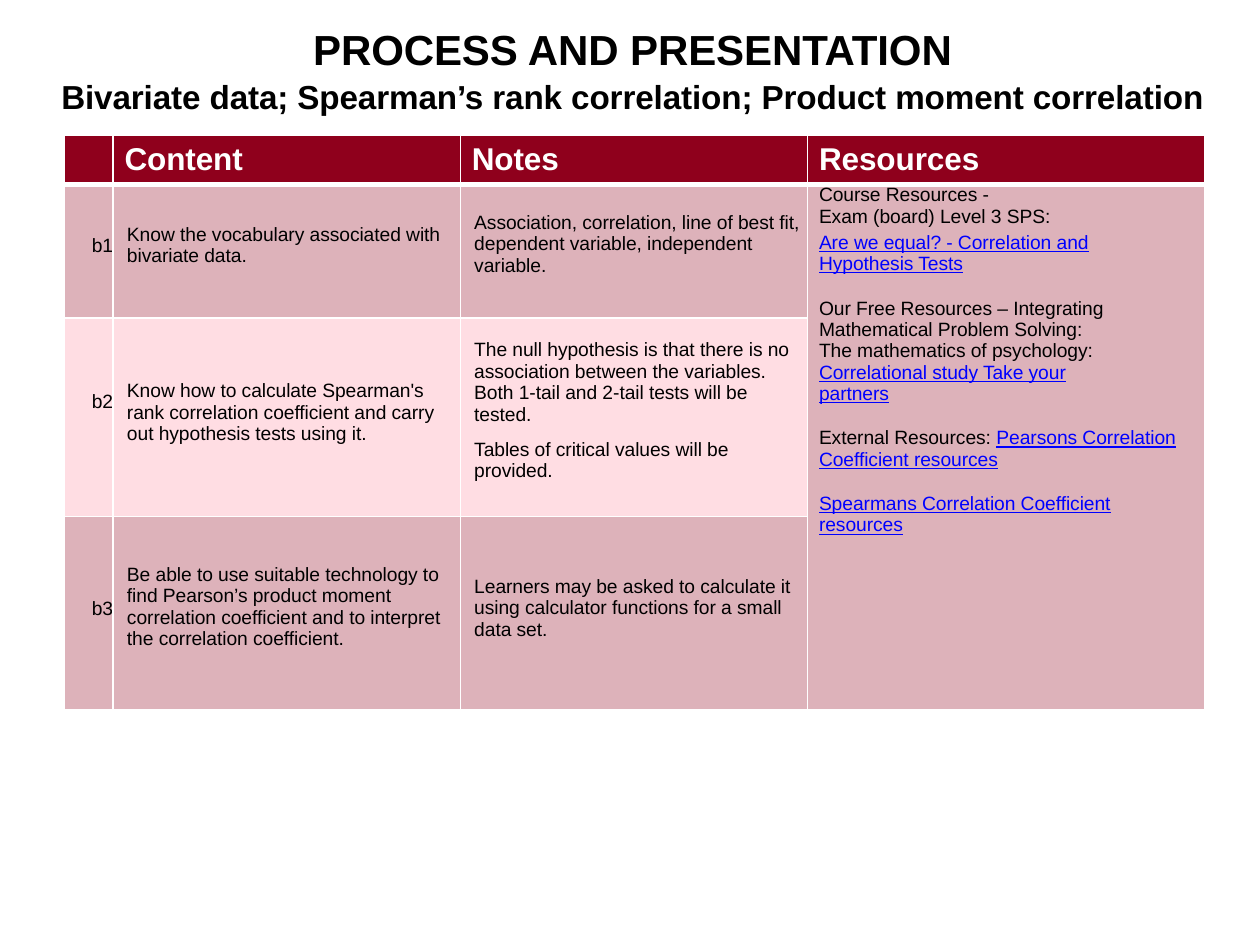
from lxml.etree import SubElement
from pptx import Presentation
from pptx.dml.color import RGBColor as Color
from pptx.enum.text import MSO_ANCHOR as Anchor, PP_ALIGN as Align
from pptx.oxml.ns import qn
from pptx.util import Cm, Pt

# Content: a paragraph is (space before, [(style, text), ...])
HEADING = [
    (0, [("title", "PROCESS AND PRESENTATION")]),
    (1.1, [("subtitle", "Bivariate data; Spearman’s rank correlation; Product moment correlation")]),
]
COLUMNS = ["", "Content", "Notes", "Resources"]
# Each body cell is (top margin in cm, paragraphs)
ROWS = [
    [(1.02, ["b1"]),
     (0.79, ["Know the vocabulary associated with bivariate data."]),
     (0.55, ["Association, correlation, line of best fit, dependent variable, independent variable."])],
    [(1.48, ["b2"]),
     (1.26, ["Know how to calculate Spearman's rank correlation coefficient and carry out "
             "hypothesis tests using it."]),
     (0.43, ["The null hypothesis is that there is no association between the variables.",
             "Both 1-tail and 2-tail tests will be tested.",
             (8, [("body", "Tables of critical values will be provided.")])])],
    [(1.64, ["b3"]),
     (0.96, ["Be able to use suitable technology to find Pearson’s product moment correlation "
             "coefficient and to interpret the correlation coefficient."]),
     (1.2, ["Learners may be asked to calculate it using calculator functions for a small data set."])],
]
RESOURCES = [
    (0, [("body", "Course Resources -\vExam (board) Level 3 SPS:")]),
    (2.6, [("link", "Are we equal? - Correlation and\vHypothesis Tests")]),
    (13, [("body", "Our Free Resources – Integrating Mathematical Problem Solving:\v"
                   "The mathematics of psychology:\v"),
          ("link", "Correlational study Take your\vpartners")]),
    (13, [("body", "External Resources: "), ("link", "Pearsons Correlation Coefficient resources")]),
    (13, [("link", "Spearmans Correlation Coefficient\vresources")]),
]

# Theme and layout
BLACK, WHITE, BLUE = (Color.from_string(c) for c in ("000000", "FFFFFF", "0000FF"))
THEME = {
    "styles": {
        "title": ({"size": Pt(24), "bold": True}, BLACK),
        "subtitle": ({"size": Pt(19), "bold": True}, BLACK),
        "header": ({"size": Pt(18), "bold": True}, WHITE),
        "body": ({"size": Pt(11), "bold": False}, BLACK),
        "link": ({"size": Pt(11), "bold": False, "underline": True}, BLUE),
    },
    "font": "Arial",
    "tracking": "-5",
    "header": "8F001C",
    "bands": ["DDB2BA", "FFDDE3"],
    "border": "FFFFFF",
}
COLUMN_WIDTHS = [0.99, 7.0, 7.0, 8.0]
ROW_HEIGHTS = [1.0, 2.69, 4.0, 3.89]
LEFT_MARGINS = [0, 0.28, 0.28, 0.23]
HEADER_MARGIN = 0.23


def apply(target, values):
    for name, value in values.items():
        setattr(target, name, value)


def write(frame, paragraphs, align=Align.LEFT):
    for index, item in enumerate(paragraphs):
        space, runs = (0, [("body", item)]) if isinstance(item, str) else item
        paragraph = frame.paragraphs[0] if index == 0 else frame.add_paragraph()
        apply(paragraph, {"alignment": align, "space_before": Pt(space)})
        for style, text in runs:
            values, color = THEME["styles"][style]
            for number, line in enumerate(text.split("\v")):
                if number:
                    paragraph.add_line_break()
                if not line:
                    continue
                run = paragraph.add_run()
                run.text = line
                apply(run.font, {"name": THEME["font"], **values})
                run.font.color.rgb = color
                run.font._element.set("spc", THEME["tracking"])


def style_cell(cell, fill, margin_left, margin_top=0, anchor=Anchor.TOP):
    apply(cell, {"margin_left": Cm(margin_left), "margin_top": Cm(margin_top),
                 "margin_right": 0, "margin_bottom": 0, "vertical_anchor": anchor})
    cell.fill.solid()
    cell.fill.fore_color.rgb = Color.from_string(fill)


def add_borders(cell, top, bottom):
    properties = cell._tc.get_or_add_tcPr()
    for index, (side, width) in enumerate([("L", 1), ("R", 1), ("T", top), ("B", bottom)]):
        line = SubElement(properties, qn(f"a:ln{side}"), w=str(Pt(width)))
        SubElement(SubElement(line, qn("a:solidFill")), qn("a:srgbClr"), val=THEME["border"])
        properties.insert(index, line)


def main():
    presentation = Presentation()
    apply(presentation, {"slide_width": Cm(25.4), "slide_height": Cm(19.05)})
    slide = presentation.slides.add_slide(presentation.slide_layouts[6])

    # Heading
    frame = slide.shapes.add_textbox(Cm(0.95), Cm(0.48), Cm(23.6), Cm(1.88)).text_frame
    apply(frame, {"word_wrap": True, "margin_left": 0, "margin_right": 0,
                  "margin_top": 0, "margin_bottom": 0})
    write(frame, HEADING, Align.CENTER)

    # Table grid
    table = slide.shapes.add_table(len(ROW_HEIGHTS), len(COLUMNS), Cm(1.29), Cm(2.72),
                                   Cm(sum(COLUMN_WIDTHS)), Cm(sum(ROW_HEIGHTS))).table
    for column, width in zip(table.columns, COLUMN_WIDTHS):
        column.width = Cm(width)
    for row, height in zip(table.rows, ROW_HEIGHTS):
        row.height = Cm(height)

    # Header row
    for index, label in enumerate(COLUMNS):
        cell = table.cell(0, index)
        style_cell(cell, THEME["header"], HEADER_MARGIN, anchor=Anchor.MIDDLE)
        if label:
            write(cell.text_frame, [(0, [("header", label)])])
        add_borders(cell, 1, 3)

    # Body rows
    for number, contents in enumerate(ROWS, 1):
        fill = THEME["bands"][(number - 1) % 2]
        for index, (margin_top, paragraphs) in enumerate(contents):
            cell = table.cell(number, index)
            style_cell(cell, fill, LEFT_MARGINS[index], margin_top)
            write(cell.text_frame, paragraphs, Align.LEFT if index else Align.RIGHT)

    # Resources, merged down the last column
    last = len(COLUMNS) - 1
    resources = table.cell(1, last)
    resources.merge(table.cell(len(ROWS), last))
    style_cell(resources, THEME["bands"][0], LEFT_MARGINS[last])
    write(resources.text_frame, RESOURCES)

    # Body borders
    for number in range(1, len(ROW_HEIGHTS)):
        for index in range(len(COLUMNS)):
            add_borders(table.cell(number, index), 3 if number == 1 else 1, 1)

    presentation.save("out.pptx")


if __name__ == "__main__":
    main()
